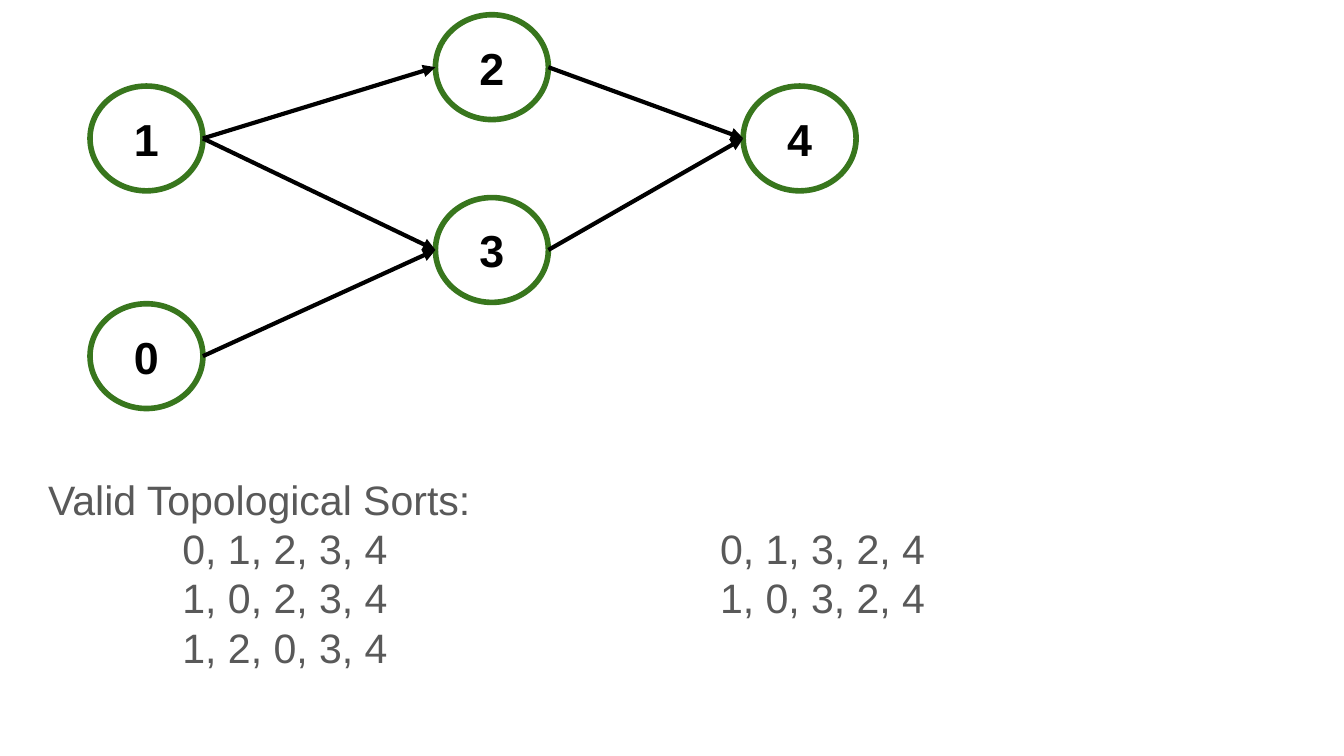
from lxml import etree
from pptx import Presentation
from pptx.dml.color import RGBColor
from pptx.enum.shapes import MSO_CONNECTOR, MSO_SHAPE
from pptx.enum.text import MSO_ANCHOR, PP_ALIGN
from pptx.oxml.ns import qn
from pptx.util import Inches, Pt

ELLIPSE = MSO_SHAPE.OVAL
STRAIGHT = MSO_CONNECTOR.STRAIGHT
MIDDLE = MSO_ANCHOR.MIDDLE
CENTER = PP_ALIGN.CENTER

COLORS = {"ring": "38761D", "ink": "000000", "body": "595959"}
FONT = "Arial"
NODE_WIDTH, NODE_HEIGHT = 0.84, 0.78

# Left and top of each graph node, in inches
NODES = {
    "1": (0.67, 0.64),
    "0": (0.67, 2.26),
    "2": (3.24, 0.11),
    "3": (3.24, 1.47),
    "4": (5.53, 0.64),
}
EDGES = [("1", "2"), ("1", "3"), ("0", "3"), ("2", "4"), ("3", "4")]
LINES = [
    "Valid Topological Sorts:",
    "\t0, 1, 2, 3, 4\t0, 1, 3, 2, 4",
    "\t1, 0, 2, 3, 4\t1, 0, 3, 2, 4",
    "\t1, 2, 0, 3, 4",
]
TAB_STOPS = [1, 5]


def set_margins(frame):
    frame.word_wrap = True
    frame.margin_left = frame.margin_right = Inches(0.1)
    frame.margin_top = frame.margin_bottom = Inches(0.1)


def style_font(font, size, color, bold=False):
    font.name = FONT
    font.size = Pt(size)
    font.bold = bold
    font.color.rgb = RGBColor.from_string(COLORS[color])


deck = Presentation()
deck.slide_width = Inches(10)
deck.slide_height = Inches(10 * 9 / 16)
page = deck.slides.add_slide(deck.slide_layouts[6])

for label, (left, top) in NODES.items():
    node = page.shapes.add_shape(
        ELLIPSE, Inches(left), Inches(top), Inches(NODE_WIDTH), Inches(NODE_HEIGHT)
    )
    node.shadow.inherit = False
    node.fill.background()
    node.line.color.rgb = RGBColor.from_string(COLORS["ring"])
    node.line.width = Pt(3)
    frame = node.text_frame
    set_margins(frame)
    frame.vertical_anchor = MIDDLE
    frame.text = label
    para = frame.paragraphs[0]
    para.alignment = CENTER
    style_font(para.runs[0].font, 24, "ink", bold=True)

# Each edge runs from the right of one node to the left of the next
for source, target in EDGES:
    source_left, source_top = NODES[source]
    target_left, target_top = NODES[target]
    edge = page.shapes.add_connector(
        STRAIGHT,
        Inches(source_left + NODE_WIDTH), Inches(source_top + NODE_HEIGHT / 2),
        Inches(target_left), Inches(target_top + NODE_HEIGHT / 2),
    )
    edge.line.color.rgb = RGBColor.from_string(COLORS["ink"])
    edge.line.width = Pt(2.25)
    etree.SubElement(edge.line._get_or_add_ln(), qn("a:tailEnd"), type="triangle")
    etree.SubElement(edge._element.spPr, qn("a:effectLst"))

box = page.shapes.add_textbox(Inches(0.26), Inches(3.43), Inches(9.47), Inches(2.08))
frame = box.text_frame
set_margins(frame)
frame.text = "\n".join(LINES)
for para in frame.paragraphs:
    tab_list = etree.SubElement(para._p.get_or_add_pPr(), qn("a:tabLst"))
    for stop in TAB_STOPS:
        etree.SubElement(tab_list, qn("a:tab"), pos=str(Inches(stop)), algn="l")
    for span in para.runs:
        style_font(span.font, 22, "body")

deck.save("out.pptx")
